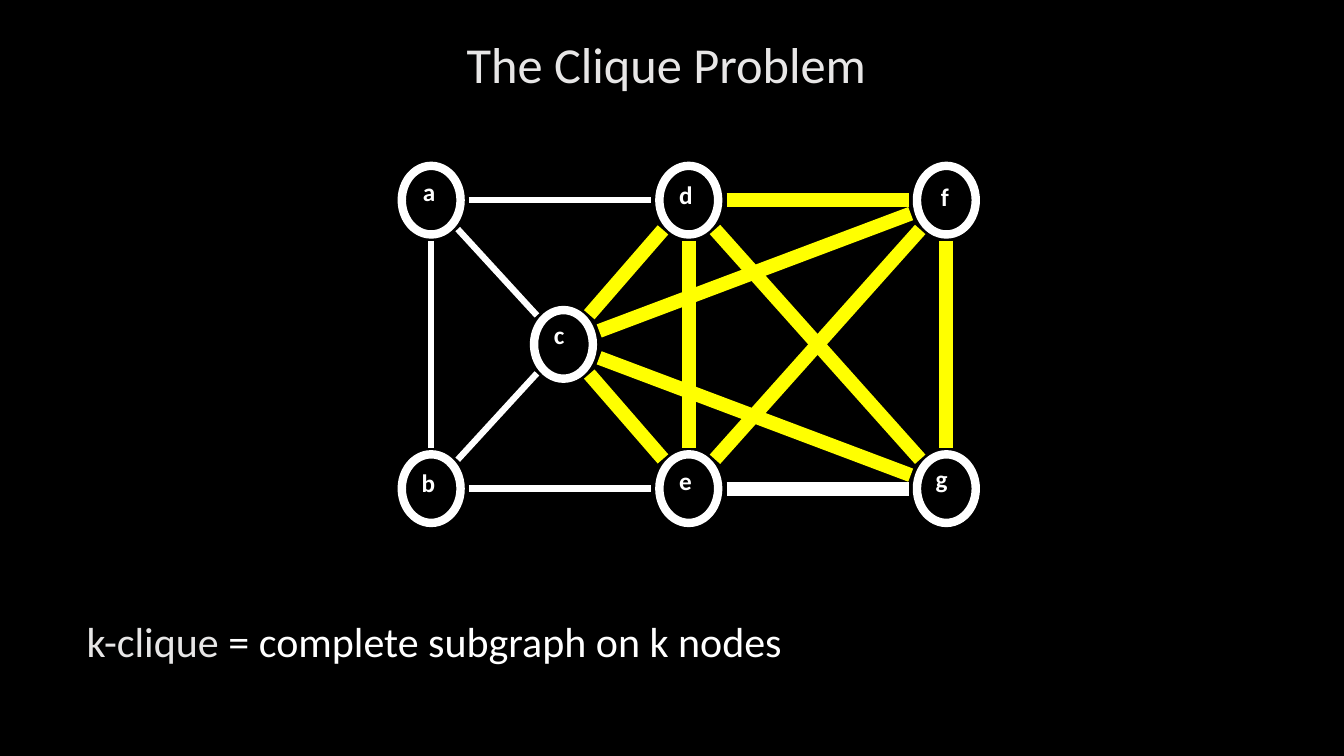
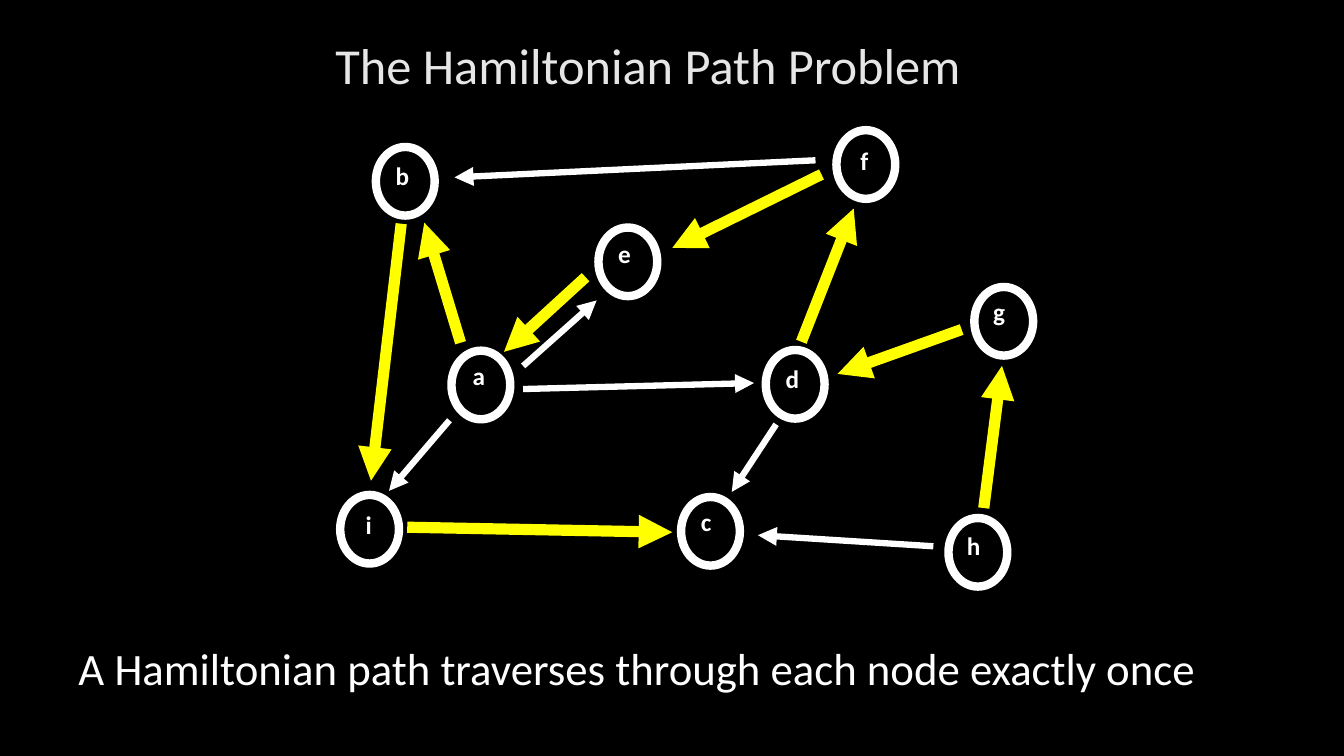
from dataclasses import dataclass
from math import hypot

from lxml.etree import SubElement
from pptx import Presentation
from pptx.dml.color import RGBColor
from pptx.enum.shapes import MSO_CONNECTOR, MSO_SHAPE
from pptx.enum.text import PP_ALIGN
from pptx.oxml.ns import qn
from pptx.util import Pt


@dataclass(frozen=True)
class Theme:
    """Colours, type sizes and line weights shared by the slides."""
    font: str = "Calibri"
    back: RGBColor = RGBColor(0, 0, 0)
    white: RGBColor = RGBColor(255, 255, 255)
    soft: RGBColor = RGBColor(0xE7, 0xE6, 0xE6)
    mark: RGBColor = RGBColor(255, 255, 0)
    title: int = 36
    label: int = 18
    ring: float = 6
    edge: float = 4.5


NODE_W, NODE_H = 42, 49
GAP_X, GAP_Y = 27, 29
LABEL_OFFSETS = {
    "a": (8, 3.6), "b": (7, 6), "c": (7, 3),
    "d": (7, 5.8), "e": (7, 4.3), "f": (10, 7.2),
    "g": (6.3, 2.9), "h": (6, 5), "i": (11, 7),
}


class Deck:
    """Holds the theme and the slide being drawn."""

    def __init__(self, theme):
        self.theme = theme
        self.prs = Presentation()
        self.prs.slide_width, self.prs.slide_height = Pt(960), Pt(540)
        fill = self.prs.slide_master.background.fill
        fill.solid()
        fill.fore_color.rgb = theme.back
        self.s = None

    def slide(self):
        self.s = self.prs.slides.add_slide(self.prs.slide_layouts[6])

    def text(self, x, y, w, h, runs, size, bold=False, align=PP_ALIGN.LEFT):
        tf = self.s.shapes.add_textbox(Pt(x), Pt(y), Pt(w), Pt(h)).text_frame
        tf.word_wrap = True
        p = tf.paragraphs[0]
        p.alignment = align
        for words, color in runs:
            r = p.add_run()
            r.text = words
            r.font.name = self.theme.font
            r.font.size = Pt(size)
            r.font.bold = bold
            r.font.color.rgb = color

    def title(self, x, y, w, words):
        t = self.theme
        self.text(x, y, w, 49, [(words, t.soft)], t.title, align=PP_ALIGN.CENTER)

    def node(self, name, cx, cy):
        t = self.theme
        x, y = cx - NODE_W / 2, cy - NODE_H / 2
        sp = self.s.shapes.add_shape(MSO_SHAPE.OVAL, Pt(x), Pt(y), Pt(NODE_W), Pt(NODE_H))
        sp.shadow.inherit = False
        sp.fill.background()
        sp.line.color.rgb = t.white
        sp.line.width = Pt(t.ring)
        dx, dy = LABEL_OFFSETS[name]
        self.text(x + dx, y + dy, 29, 36, [(name, t.white)], t.label, bold=True)

    def nodes(self, centres):
        for name, (cx, cy) in centres.items():
            self.node(name, cx, cy)

    def line(self, x1, y1, x2, y2, color, width, arrow=False):
        c = self.s.shapes.add_connector(MSO_CONNECTOR.STRAIGHT, Pt(x1), Pt(y1), Pt(x2), Pt(y2))
        c.line.color.rgb = color
        c.line.width = Pt(width)
        if arrow:
            SubElement(c.line._get_or_add_ln(), qn("a:tailEnd"), type="triangle")
        SubElement(c._element.spPr, qn("a:effectLst"))

    def edge(self, start, end, color, width):
        (x1, y1), (x2, y2) = start, end
        dx, dy = x2 - x1, y2 - y1
        k = 1 / hypot(dx / GAP_X, dy / GAP_Y)
        self.line(x1 + k * dx, y1 + k * dy, x2 - k * dx, y2 - k * dy, color, width)


def clique_slide(deck):
    """Draw the graph with its clique marked."""
    t = deck.theme
    left, top, pitch, drop = 308, 143, 184, 206
    centres = {
        name: (left + col * pitch, top + row * drop)
        for col, pair in enumerate(("ab", "de", "fg"))
        for row, name in enumerate(pair)
    }
    centres["c"] = (402.5, top + drop / 2)
    edges = [
        ("ab ad be ac bc", t.white, t.edge),
        ("cd ce de fg dg ef df cg cf", t.mark, 10),
        ("eg", t.white, 10),
    ]
    deck.slide()
    deck.title(44.5, 20, 863, "The Clique Problem")
    deck.nodes(centres)
    for pairs, color, width in edges:
        for u, v in pairs.split():
            deck.edge(centres[u], centres[v], color, width)
    caption = [("k-clique", t.soft), (" = complete subgraph on k nodes", t.white)]
    deck.text(54.7, 436.3, 527, 42, caption, 30)


def hamilton_slide(deck):
    """Draw the directed graph with its path marked."""
    t = deck.theme
    centres = {
        "a": (343.5, 275), "b": (289.5, 129.5), "c": (507.5, 379.5),
        "d": (568, 274.5), "e": (448.5, 187), "f": (618.5, 117.5),
        "g": (717, 229.5), "h": (698.5, 394.5), "i": (264, 378),
    }
    plain_arrows = [
        (373.7, 261.4, 426.2, 214.6),
        (373.7, 277.9, 538.6, 273.6),
        (582.5, 114.5, 324.7, 126.7),
        (666.7, 390.2, 541.4, 382.3),
        (554.4, 303.1, 522.7, 351.4),
        (321.1, 300.2, 277.9, 350.6),
    ]
    path_arrows = [
        (702.7, 362.9, 715.7, 261.4),
        (686.9, 235.4, 598.3, 267.1),
        (572.4, 244.1, 609.8, 149),
        (586.8, 124.6, 480.2, 177.1),
        (418.3, 198, 360, 251.3),
        (329, 244.8, 303.1, 159.1),
        (286.6, 159.8, 265, 343.4),
        (290.9, 376.6, 480.2, 380.2),
    ]
    deck.slide()
    deck.title(38, 21, 850, "The Hamiltonian Path Problem")
    deck.nodes(centres)
    for arrows, color, width in ((plain_arrows, t.white, t.edge), (path_arrows, t.mark, 8)):
        for ends in arrows:
            deck.line(*ends, color, width, arrow=True)
    caption = [("A Hamiltonian path traverses through each node exactly once", t.white)]
    deck.text(49, 454.3, 850, 44, caption, 32)


def main():
    """Build both slides and save them."""
    deck = Deck(Theme())
    clique_slide(deck)
    hamilton_slide(deck)
    deck.prs.save("out.pptx")


if __name__ == "__main__":
    main()
